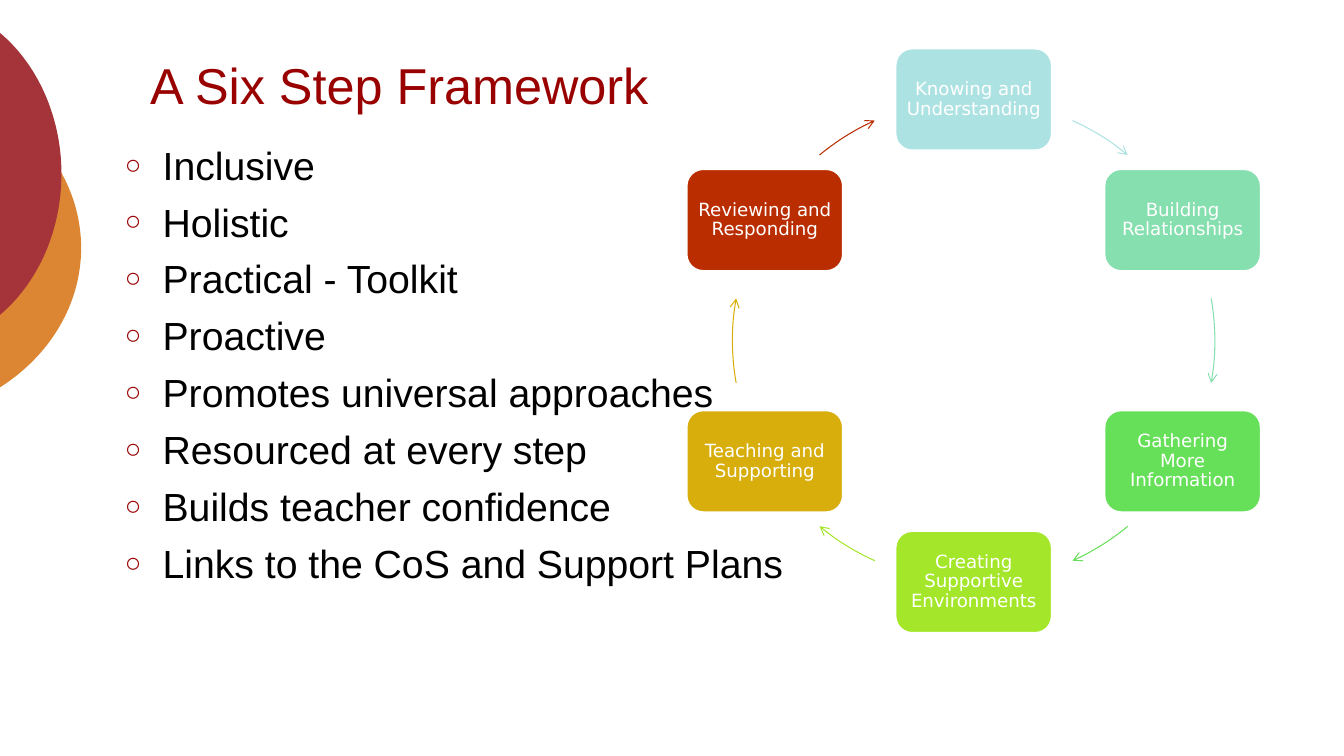
from math import acos, cos, radians, sin

from lxml.etree import SubElement
from pptx import Presentation
from pptx.dml.color import RGBColor
from pptx.enum.shapes import MSO_SHAPE as Preset
from pptx.enum.text import MSO_ANCHOR as Anchor, PP_ALIGN as Align
from pptx.oxml.ns import qn
from pptx.util import Emu, Pt

COLUMNS, ROWS = 80, 45
WHITE = RGBColor(0xFF, 0xFF, 0xFF)
BLACK = RGBColor(0x00, 0x00, 0x00)
CRIMSON = RGBColor(0x99, 0x00, 0x00)
ORANGE = RGBColor(0xDC, 0x86, 0x33)
MAROON = RGBColor(0xA4, 0x34, 0x3A)
AQUA = RGBColor(0xAD, 0xE2, 0xE2)
MINT = RGBColor(0x85, 0xDF, 0xAE)
GREEN = RGBColor(0x67, 0xE0, 0x59)
LIME = RGBColor(0xA4, 0xE6, 0x29)
GOLD = RGBColor(0xD8, 0xAE, 0x0C)
RUST = RGBColor(0xB9, 0x2D, 0x00)

QUALITIES = [
    "Inclusive",
    "Holistic",
    "Practical - Toolkit",
    "Proactive",
    "Promotes universal approaches",
    "Resourced at every step",
    "Builds teacher confidence",
    "Links to the CoS and Support Plans",
]
STEPS = [
    ("Knowing and Understanding", AQUA, (24.2, 39.7)),
    ("Building Relationships", MINT, (79.9, 100.1)),
    ("Gathering More Information", GREEN, (140.3, 155.8)),
    ("Creating Supportive Environments", LIME, (204.2, 219.7)),
    ("Teaching and Supporting", GOLD, (259.9, 280.1)),
    ("Reviewing and Responding", RUST, (320.3, 335.8)),
]
CYCLE_CENTRE, CYCLE_RADIUS = (57.96, 20.28), 14.36
STEP_SIZE = (9.36, 6.12)


def write(paragraph, text, font="Arial", size=28, color=BLACK, align=Align.LEFT, spacing=1.0, before=0):
    """Put formatted text into a paragraph."""
    paragraph.text = text
    paragraph.alignment = align
    paragraph.line_spacing = spacing
    paragraph.space_before = Pt(before)
    style = paragraph.runs[0].font
    style.name, style.size, style.color.rgb = font, Pt(size), color


class FrameworkSlide:
    """Draws styled elements on a slide measured in grid columns and rows."""

    def __init__(self, presentation):
        """Add a title-only slide and size its grid."""
        self.slide = presentation.slides.add_slide(presentation.slide_layouts[5])
        self.column = presentation.slide_width / COLUMNS
        self.row = presentation.slide_height / ROWS

    def place(self, left, top, width, height):
        """Turn a grid box into slide lengths."""
        return (Emu(round(left * self.column)), Emu(round(top * self.row)),
                Emu(round(width * self.column)), Emu(round(height * self.row)))

    def add_title(self, text, *box):
        """Move and format the title placeholder."""
        title = self.slide.shapes.title
        title.left, title.top, title.width, title.height = self.place(*box)
        title.text_frame.vertical_anchor = Anchor.MIDDLE
        write(title.text_frame.paragraphs[0], text, size=36, color=CRIMSON)

    def add_bullets(self, lines, *box):
        """Add a list with ring bullets."""
        frame = self.slide.shapes.add_textbox(*self.place(*box)).text_frame
        frame.word_wrap = True
        for index, line in enumerate(lines):
            paragraph = frame.add_paragraph() if index else frame.paragraphs[0]
            write(paragraph, line, before=7 if index else 0)
            properties = paragraph._p.get_or_add_pPr()
            indent = Pt(27)
            properties.set("marL", str(indent))
            properties.set("indent", str(-indent))
            bullet_color = SubElement(properties, qn("a:buClr"))
            SubElement(bullet_color, qn("a:srgbClr"), val=str(CRIMSON))
            SubElement(properties, qn("a:buSzPct"), val="70000")
            SubElement(properties, qn("a:buFont"), typeface="Arial")
            SubElement(properties, qn("a:buChar"), char="○")

    def add_edge_disc(self, centre, radii, color):
        """Add the part of an ellipse that lies right of the slide's left edge."""
        limit, segments = acos(-centre[0] / radii[0]), 60
        angles = [limit * (2 * index / segments - 1) for index in range(segments + 1)]
        points = [(round((centre[0] + radii[0] * cos(angle)) * self.column),
                   round((centre[1] + radii[1] * sin(angle)) * self.row)) for angle in angles]
        builder = self.slide.shapes.build_freeform(*points[0])
        builder.add_line_segments(points[1:], close=True)
        disc = builder.convert_to_shape()
        disc.shadow.inherit = False
        disc.fill.solid()
        disc.fill.fore_color.rgb = color
        disc.line.fill.background()

    def add_step(self, text, color, angle):
        """Add a step box on the cycle, at an angle clockwise from the top."""
        width, height = STEP_SIZE
        left = CYCLE_CENTRE[0] + CYCLE_RADIUS * sin(radians(angle)) - width / 2
        top = CYCLE_CENTRE[1] - CYCLE_RADIUS * cos(radians(angle)) - height / 2
        box = self.slide.shapes.add_shape(Preset.ROUNDED_RECTANGLE, *self.place(left, top, width, height))
        box.shadow.inherit = False
        box.fill.solid()
        box.fill.fore_color.rgb = color
        box.line.color.rgb, box.line.width = WHITE, Pt(2)
        frame = box.text_frame
        frame.word_wrap, frame.vertical_anchor = True, Anchor.MIDDLE
        frame.margin_left = frame.margin_right = frame.margin_top = frame.margin_bottom = Pt(3.6)
        write(frame.paragraphs[0], text, "DejaVu Sans", 13, WHITE, Align.CENTER, 0.9)

    def add_cycle_arrow(self, color, sweep):
        """Add an arrow along the cycle between two angles from the top."""
        left, top = (middle - CYCLE_RADIUS for middle in CYCLE_CENTRE)
        size = 2 * CYCLE_RADIUS
        arc = self.slide.shapes.add_shape(Preset.ARC, *self.place(left, top, size, size))
        for index, angle in enumerate(sweep):
            arc.adjustments[index] = (angle - 90) % 360 * 0.6
        arc.shadow.inherit = False
        arc.fill.background()
        arc.line.color.rgb, arc.line.width = color, Pt(0.75)
        SubElement(arc.line._get_or_add_ln(), qn("a:tailEnd"), type="arrow")


def main():
    """Build and save the presentation."""
    presentation = Presentation()
    presentation.slide_width, presentation.slide_height = Emu(12192000), Emu(6858000)
    slide = FrameworkSlide(presentation)
    slide.add_edge_disc((-6.9, 14.76), (11.73, 10.26), ORANGE)
    slide.add_edge_disc((-5.16, 10.35), (8.82, 10.35), MAROON)
    slide.add_title("A Six Step Framework", 8.34, 2.16, 67.56, 5.7)
    slide.add_bullets(QUALITIES, 6.84, 8.1, 64.32, 30.36)
    for index, (text, color, sweep) in enumerate(STEPS):
        slide.add_step(text, color, index * 360 / len(STEPS))
        slide.add_cycle_arrow(color, sweep)
    presentation.save("out.pptx")


if __name__ == "__main__":
    main()
